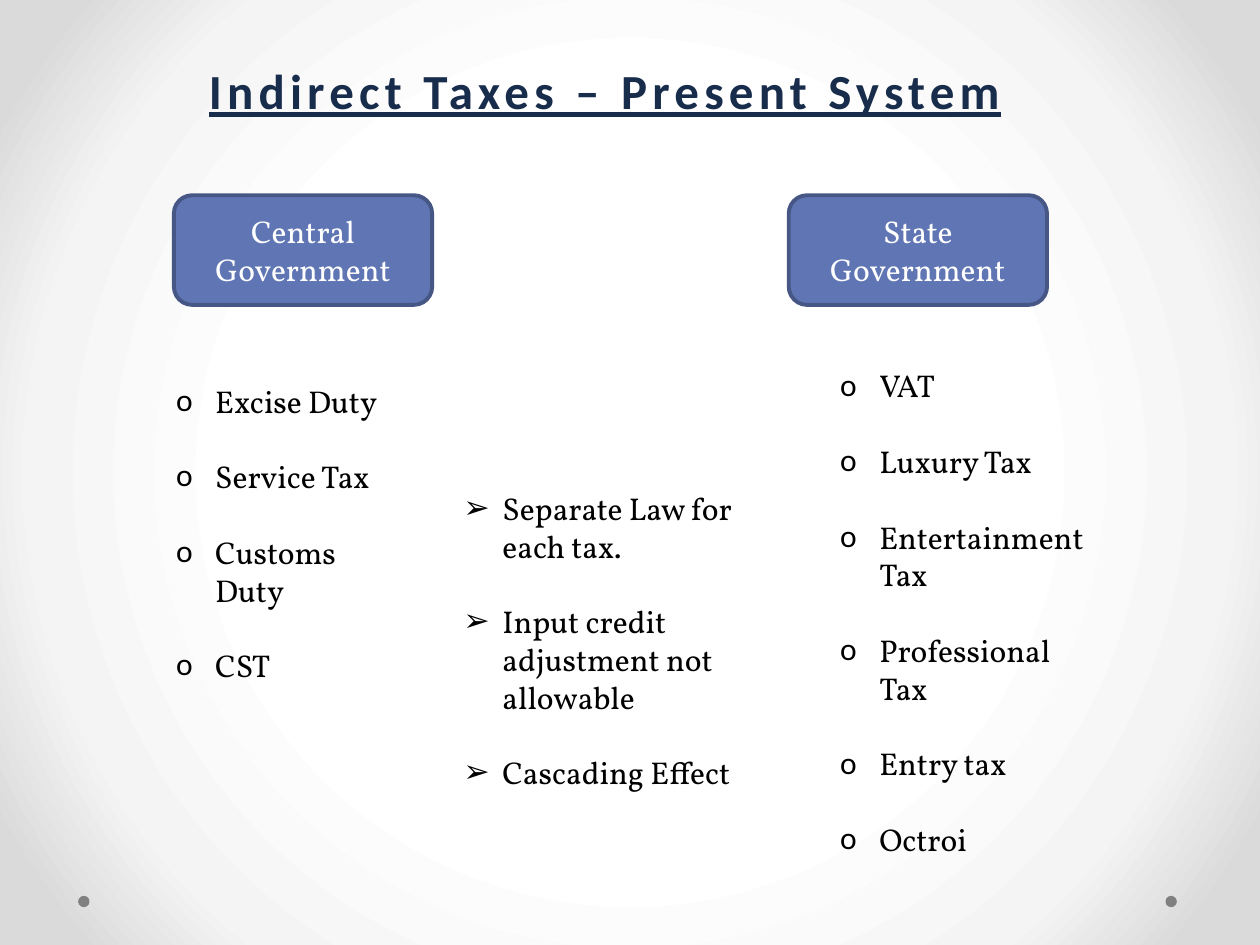
from lxml.etree import SubElement
from pptx import Presentation
from pptx.dml.color import RGBColor
from pptx.enum.shapes import MSO_SHAPE
from pptx.enum.text import MSO_ANCHOR, PP_ALIGN
from pptx.oxml import parse_xml
from pptx.oxml.ns import nsdecls, qn
from pptx.util import Inches, Pt

BODY = {"name": "Vollkorn", "size": Pt(18)}
TITLE = {"name": "Calibri", "size": Pt(28), "bold": True, "underline": True}
BACKGROUND_STOPS = [(50, "FFFFFF"), (76, "F4F4F4"), (92, "DADADA")]
CENTRAL_TAXES = ["Excise Duty", "Service Tax", "Customs Duty", "CST"]
STATE_TAXES = ["VAT", "Luxury Tax", "Entertainment Tax", "Professional Tax",
               "Entry tax", "Octroi"]
DRAWBACKS = ["Separate Law for each tax.",
             "Input credit adjustment not allowable", "Cascading Effect"]


def color(value):
    return RGBColor.from_string(value)


def add_run(paragraph, text, font_format, font_color):
    run = paragraph.add_run()
    run.text = text
    for name, value in font_format.items():
        setattr(run.font, name, value)
    run.font.color.rgb = color(font_color)
    return run


def add_background(slide):
    stops = "".join(
        f'<a:gs pos="{position * 1000}"><a:srgbClr val="{value}"/></a:gs>'
        for position, value in BACKGROUND_STOPS)
    slide.background.fill.solid()
    properties = slide.element.cSld.find(qn("p:bg")).find(qn("p:bgPr"))
    properties.replace(properties[0], parse_xml(
        f'<a:gradFill {nsdecls("a")} rotWithShape="1"><a:gsLst>{stops}</a:gsLst>'
        '<a:path path="circle"><a:fillToRect l="50000" t="50000" r="50000" '
        'b="50000"/></a:path></a:gradFill>'))


def add_filled_shape(slide, kind, left, top, width, height, fill):
    shape = slide.shapes.add_shape(
        kind, Inches(left), Inches(top), Inches(width), Inches(height))
    shape.shadow.inherit = False
    shape.fill.solid()
    shape.fill.fore_color.rgb = color(fill)
    return shape


def add_corner_dot(slide, left, top, size):
    dot = add_filled_shape(slide, MSO_SHAPE.OVAL, left, top, size, size, "808080")
    dot.line.fill.background()


def add_text_frame(slide, left, top, width, height):
    box = slide.shapes.add_textbox(
        Inches(left), Inches(top), Inches(width), Inches(height))
    box.text_frame.word_wrap = True
    return box.text_frame


def add_title(slide, left, top, width, height):
    paragraph = add_text_frame(slide, left, top, width, height).paragraphs[0]
    paragraph.alignment = PP_ALIGN.CENTER
    run = add_run(paragraph, "Indirect Taxes – Present System", TITLE, "182C4B")
    properties = run.font._element
    properties.set("spc", "300")
    properties.find(qn("a:solidFill")).addnext(parse_xml(
        f'<a:effectLst {nsdecls("a")}><a:outerShdw blurRad="25000" dist="20000" '
        'dir="2700000"><a:srgbClr val="6076B4"><a:alpha val="60000"/>'
        '</a:srgbClr></a:outerShdw></a:effectLst>'))


def add_government(slide, name, left, top, width, height):
    shape = add_filled_shape(
        slide, MSO_SHAPE.ROUNDED_RECTANGLE, left, top, width, height, "6076B4")
    shape.line.color.rgb = color("475785")
    shape.line.width = Pt(2.25)
    shape.text_frame.word_wrap = True
    shape.text_frame.vertical_anchor = MSO_ANCHOR.MIDDLE
    paragraph = shape.text_frame.paragraphs[0]
    paragraph.alignment = PP_ALIGN.CENTER
    add_run(paragraph, name, BODY, "FFFFFF")


def add_list(slide, items, bullet, left, top, width, height):
    frame = add_text_frame(slide, left, top, width, height)
    for index, item in enumerate(items):
        paragraph = frame.paragraphs[0] if index == 0 else frame.add_paragraph()
        if index:
            paragraph.space_before = Pt(21.6)
        add_run(paragraph, item, BODY, "000000")
        properties = paragraph._p.get_or_add_pPr()
        properties.set("marL", str(Inches(0.31)))
        properties.set("indent", str(Inches(-0.31)))
        SubElement(properties, qn("a:buFont"), typeface="Calibri")
        SubElement(properties, qn("a:buChar"), char=bullet)


def main():
    presentation = Presentation()
    presentation.slide_width = Inches(10)
    presentation.slide_height = Inches(7.5)
    slide = presentation.slides.add_slide(presentation.slide_layouts[6])
    add_background(slide)
    for left in (9.25, 0.62):
        add_corner_dot(slide, left, 7.11, 0.09)
    add_title(slide, 0.39, 0.43, 8.82, 0.57)
    for name, left in (("Central Government", 1.38), ("State Government", 6.26)):
        add_government(slide, name, left, 1.55, 2.05, 0.87)
    add_list(slide, CENTRAL_TAXES, "o", 1.3, 2.98, 1.89, 3.13)
    add_list(slide, STATE_TAXES, "o", 6.57, 2.86, 2.28, 4.04)
    add_list(slide, DRAWBACKS, "➢", 3.58, 3.83, 2.44, 2.52)
    presentation.save("out.pptx")


if __name__ == "__main__":
    main()
